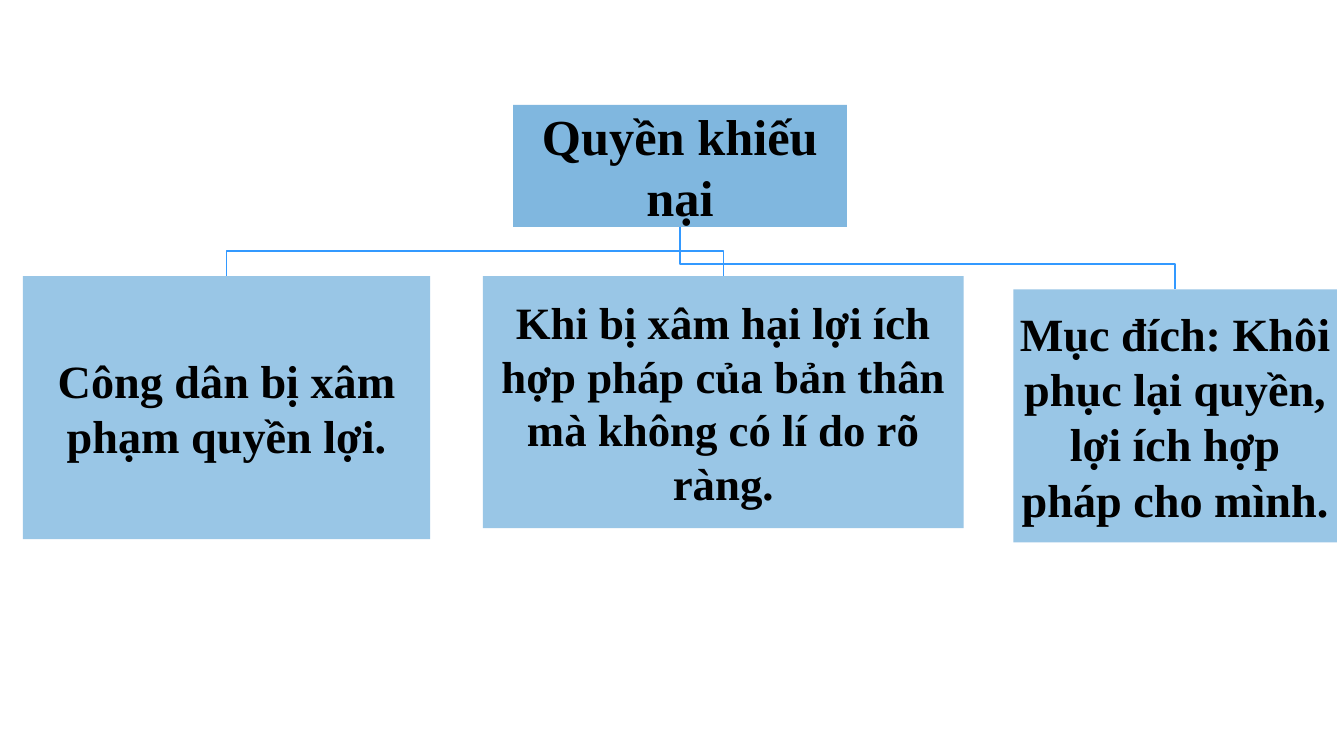
from dataclasses import dataclass

import pptx
import pptx.dml.color
import pptx.enum.shapes
import pptx.enum.text
import pptx.shapes.autoshape
import pptx.slide
import pptx.util


@dataclass(frozen=True)
class Theme:
    font: str = "Times New Roman"
    text: str = "000000"
    root_fill: str = "80B7DF"
    branch_fill: str = "99C6E6"
    line: str = "3399FF"
    line_width: float = 1
    root_size: int = 36
    branch_size: int = 33
    long_branch_size: int = 32
    root_inset: float = 0.03
    branch_inset: float = 0.02


@dataclass(frozen=True)
class Node:
    text: str
    column: float
    row: float
    columns: float
    rows: float
    size: int
    fill: str
    inset: float

    @property
    def center(self) -> float:
        return self.column + self.columns / 2

    @property
    def bottom(self) -> float:
        return self.row + self.rows


THEME = Theme()
SLIDE_WIDTH = pptx.util.Inches(13.33)
SLIDE_HEIGHT = pptx.util.Inches(7.5)
GRID = 100
LINE_DROP = 3.33


def branch(text: str, column: float, row: float, columns: float, rows: float,
           size: int = THEME.branch_size) -> Node:
    return Node(text, column, row, columns, rows, size, THEME.branch_fill, THEME.branch_inset)


ROOT = Node("Quyền khiếu nại", 38.18, 13.87, 24.83, 16.13,
            THEME.root_size, THEME.root_fill, THEME.root_inset)
BRANCHES = [
    branch("Công dân bị xâm phạm quyền lợi.", 1.7, 36.53, 30.31, 34.8),
    branch("Khi bị xâm hại lợi ích hợp pháp của bản thân mà không có lí do rõ ràng.",
           35.93, 36.53, 35.78, 33.33, THEME.long_branch_size),
    branch("Mục đích: Khôi phục lại quyền, lợi ích hợp pháp cho mình.",
           75.39, 38.27, 24.08, 33.47),
]


def across(columns: float) -> int:
    return round(SLIDE_WIDTH * columns / GRID)


def down(rows: float) -> int:
    return round(SLIDE_HEIGHT * rows / GRID)


def color(value: str) -> pptx.dml.color.RGBColor:
    return pptx.dml.color.RGBColor.from_string(value)


def format_node(shape: pptx.shapes.autoshape.Shape, node: Node) -> None:
    shape.left, shape.top = across(node.column), down(node.row)
    shape.width, shape.height = across(node.columns), down(node.rows)
    shape.fill.solid()
    shape.fill.fore_color.rgb = color(node.fill)
    shape.line.fill.background()
    frame = shape.text_frame
    frame.word_wrap = True
    frame.auto_size = pptx.enum.text.MSO_AUTO_SIZE.NONE
    frame.vertical_anchor = pptx.enum.text.MSO_ANCHOR.MIDDLE
    inset = pptx.util.Inches(node.inset)
    frame.margin_left = frame.margin_right = inset
    frame.margin_top = frame.margin_bottom = inset
    paragraph = frame.paragraphs[0]
    paragraph.alignment = pptx.enum.text.PP_ALIGN.CENTER
    run = paragraph.add_run()
    run.text = node.text
    run.font.name = THEME.font
    run.font.size = pptx.util.Pt(node.size)
    run.font.bold = True
    run.font.color.rgb = color(THEME.text)


def draw_link(slide: pptx.slide.Slide, parent: Node, child: Node) -> None:
    turn = down(child.row - LINE_DROP)
    start, end = across(parent.center), across(child.center)
    builder = slide.shapes.build_freeform(start, down(parent.bottom))
    builder.add_line_segments([(start, turn), (end, turn), (end, down(child.row))], close=False)
    shape = builder.convert_to_shape()
    shape.shadow.inherit = False
    shape.fill.background()
    shape.line.color.rgb = color(THEME.line)
    shape.line.width = pptx.util.Pt(THEME.line_width)


def draw_branch(slide: pptx.slide.Slide, node: Node) -> None:
    shape = slide.shapes.add_shape(pptx.enum.shapes.MSO_SHAPE.RECTANGLE, 0, 0, 0, 0)
    shape.shadow.inherit = False
    format_node(shape, node)


def main() -> None:
    presentation = pptx.Presentation()
    presentation.slide_width = SLIDE_WIDTH
    presentation.slide_height = SLIDE_HEIGHT
    title_only = presentation.slide_layouts.get_by_name("Title Only")
    slide = presentation.slides.add_slide(title_only)
    format_node(slide.shapes.title, ROOT)
    for node in BRANCHES:
        draw_link(slide, ROOT, node)
        draw_branch(slide, node)
    presentation.save("out.pptx")


if __name__ == "__main__":
    main()
